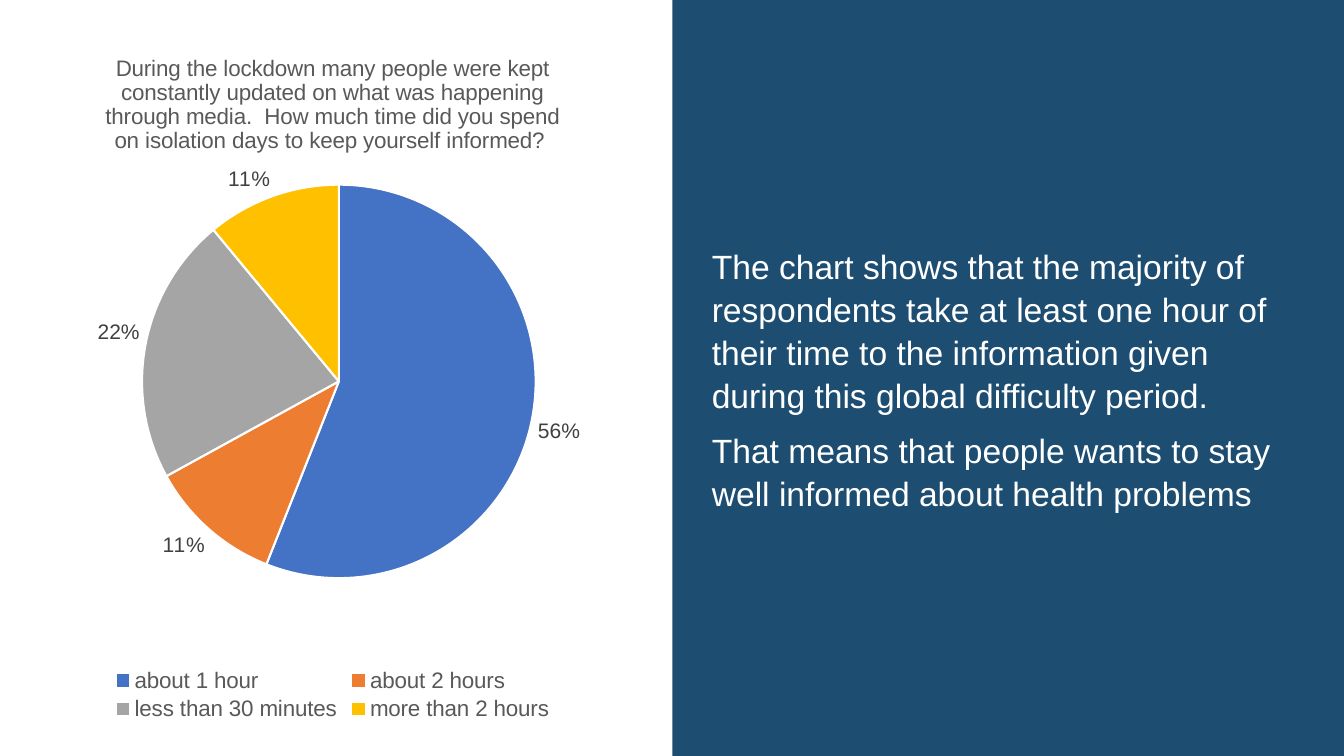
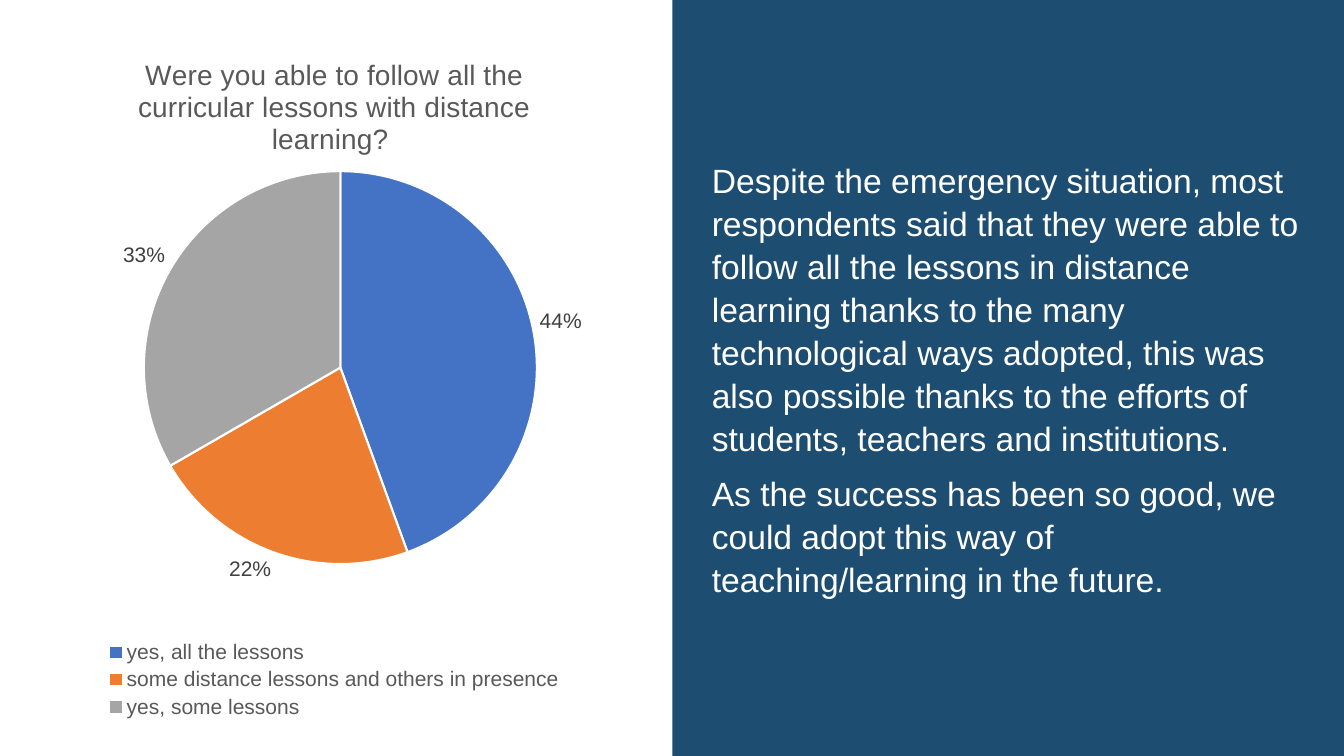
"""Build two survey slides, each with a pie chart beside a commentary panel."""
from lxml import etree
from pptx import Presentation
from pptx.chart.data import CategoryChartData
from pptx.dml.color import RGBColor
from pptx.enum.chart import XL_CHART_TYPE, XL_LABEL_POSITION, XL_LEGEND_POSITION
from pptx.enum.shapes import MSO_SHAPE
from pptx.enum.text import MSO_ANCHOR, PP_ALIGN
from pptx.oxml.ns import qn
from pptx.util import Inches, Pt

PIE = XL_CHART_TYPE.PIE
OUTSIDE = XL_LABEL_POSITION.OUTSIDE_END
BOTTOM = XL_LEGEND_POSITION.BOTTOM
RECTANGLE = MSO_SHAPE.RECTANGLE
MIDDLE = MSO_ANCHOR.MIDDLE
LEFT = PP_ALIGN.LEFT

FONT = "Arial"
WHITE = RGBColor(0xFF, 0xFF, 0xFF)
BLACK = RGBColor(0x00, 0x00, 0x00)
NAVY = RGBColor(0x1D, 0x4D, 0x71)
GREY = RGBColor(0x59, 0x59, 0x59)
DARK_GREY = RGBColor(0x40, 0x40, 0x40)
SLICE_COLOURS = (
    RGBColor(0x44, 0x72, 0xC4),
    RGBColor(0xED, 0x7D, 0x31),
    RGBColor(0xA5, 0xA5, 0xA5),
    RGBColor(0xFF, 0xC0, 0x00),
)


class SurveyDeck:
    """Hold the deck, its style and the current page."""

    def __init__(self):
        """Start an empty widescreen deck."""
        self.deck = Presentation()
        self.deck.slide_width = Inches(13.33)
        self.deck.slide_height = Inches(7.5)
        self.page = None

    def add_page(self):
        """Start a blank page."""
        self.page = self.deck.slides.add_slide(self.deck.slide_layouts[6])

    def style(self, font, size, colour):
        """Apply the deck font in a given size and colour."""
        font.name = FONT
        font.size = Pt(size)
        font.bold = False
        font.color.rgb = colour

    def place_plot(self, chart, frame):
        """Fix the inner plot area to fractions of the chart."""
        area = chart.element.find(".//" + qn("c:plotArea"))
        for old in area.findall(qn("c:layout")):
            area.remove(old)
        layout = etree.Element(qn("c:layout"))
        manual = etree.SubElement(layout, qn("c:manualLayout"))
        settings = [("layoutTarget", "inner"), ("xMode", "edge"), ("yMode", "edge")]
        settings += zip("xywh", frame)
        for tag, value in settings:
            etree.SubElement(manual, qn("c:" + tag)).set("val", str(value))
        area.insert(0, layout)

    def add_pie(self, box, title, title_size, legend_size, answers, frame):
        """Add a titled pie chart with percentages and a legend."""
        data = CategoryChartData()
        data.categories = list(answers)
        data.add_series("Series 1", list(answers.values()))
        lengths = [Inches(length) for length in box]
        chart = self.page.shapes.add_chart(PIE, *lengths, data).chart
        self.style(chart.font, 10, BLACK)

        chart.has_title = True
        span = chart.chart_title.text_frame.paragraphs[0].add_run()
        span.text = title
        self.style(span.font, title_size, GREY)

        chart.has_legend = True
        chart.legend.position = BOTTOM
        chart.legend.include_in_layout = False
        self.style(chart.legend.font, legend_size, GREY)

        plot = chart.plots[0]
        plot.vary_by_categories = True
        for index, colour in enumerate(SLICE_COLOURS[:len(answers)]):
            form = plot.series[0].points[index].format
            form.fill.solid()
            form.fill.fore_color.rgb = colour
            form.line.color.rgb = WHITE
            form.line.width = Pt(1.5)

        plot.has_data_labels = True
        labels = plot.data_labels
        labels.show_value = False
        labels.show_percentage = True
        labels.number_format = "0%"
        labels.number_format_is_linked = False
        labels.position = OUTSIDE
        self.style(labels.font, 15, DARK_GREY)
        self.place_plot(chart, frame)

    def add_panel(self, texts):
        """Add the commentary panel that fills the right half."""
        half = Inches(6.67)
        panel = self.page.shapes.add_shape(RECTANGLE, half, 0, half, Inches(7.5))
        panel.shadow.inherit = False
        panel.fill.solid()
        panel.fill.fore_color.rgb = NAVY
        panel.line.fill.background()
        frame = panel.text_frame
        frame.word_wrap = True
        frame.vertical_anchor = MIDDLE
        frame.margin_left = frame.margin_right = Inches(0.39)
        frame.margin_top = frame.margin_bottom = Inches(0.05)
        for index, text in enumerate(texts):
            para = frame.add_paragraph() if index else frame.paragraphs[0]
            para.alignment = LEFT
            para.line_spacing = 1.07
            para.space_after = Pt(8)
            span = para.add_run()
            span.text = text
            self.style(span.font, 24, WHITE)


def main():
    """Build and save the deck."""
    survey = SurveyDeck()

    survey.add_page()
    survey.add_pie(
        (0.25, 0.3, 6.1, 6.9),
        "During the lockdown many people were kept constantly updated on what was "
        "happening through media.  How much time did you spend on isolation days "
        "to keep yourself informed? ",
        16, 16,
        {"about 1 hour": 56, "about 2 hours": 11,
         "less than 30 minutes": 22, "more than 2 hours": 11},
        (0.19, 0.22, 0.64, 0.57),
    )
    survey.add_panel([
        "The chart shows that the majority of respondents take at least one hour of "
        "their time to the information given during this global difficulty period.",
        "That means that people wants to stay well informed about health problems",
    ])

    survey.add_page()
    survey.add_pie(
        (0.27, 0.33, 6.09, 6.84),
        "Were you able to follow all the curricular lessons with distance learning? ",
        20, 15,
        {"yes, all the lessons": 44,
         "some distance lessons and others in presence": 22,
         "yes, some lessons": 33},
        (0.19, 0.2, 0.64, 0.57),
    )
    survey.add_panel([
        "Despite the emergency situation, most respondents said that they were able "
        "to follow all the lessons in distance learning thanks to the many "
        "technological ways adopted, this was also possible thanks to the efforts of "
        "students, teachers and institutions.",
        "As the success has been so good, we could adopt this way of "
        "teaching/learning in the future.",
    ])

    survey.deck.save("out.pptx")


if __name__ == "__main__":
    main()
